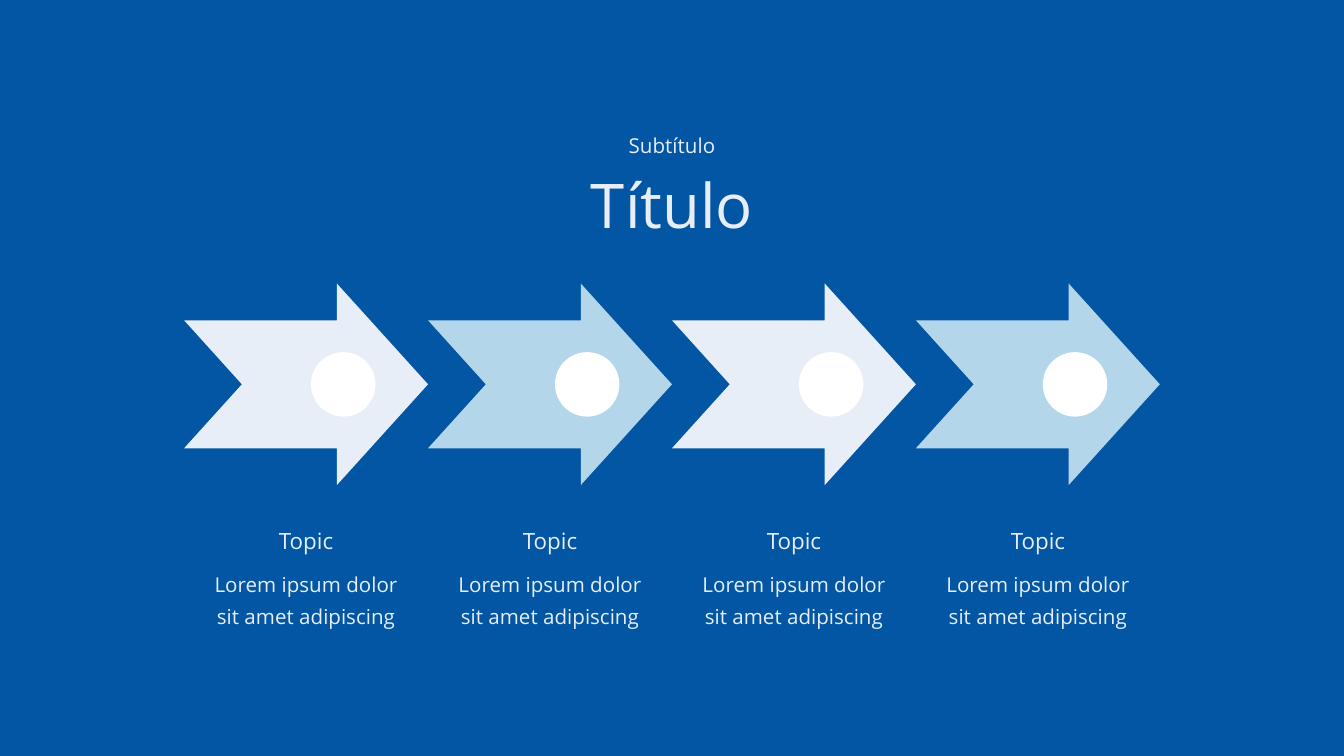
from pptx import Presentation
from pptx.dml.color import RGBColor
from pptx.enum.shapes import MSO_SHAPE
from pptx.enum.text import MSO_AUTO_SIZE, PP_ALIGN
from pptx.util import Inches, Pt

SLIDE_WIDTH = 10
SLIDE_HEIGHT = SLIDE_WIDTH * 9 / 16
COLUMN_COUNT = 4
COLUMN_WIDTH = 1.815
GRID_LEFT = (SLIDE_WIDTH - COLUMN_COUNT * COLUMN_WIDTH) / 2

ROYAL_BLUE = RGBColor(0x02, 0x56, 0xA3)
SKY_BLUE = RGBColor(0xB4, 0xD6, 0xEA)
PALE_BLUE = RGBColor(0xE8, 0xEE, 0xF8)
WHITE = RGBColor(0xFF, 0xFF, 0xFF)

ARROW_COLORS = [PALE_BLUE, SKY_BLUE]
TOPICS = [("Topic", "Lorem ipsum dolor sit amet adipiscing")] * COLUMN_COUNT

FRAME_FORMAT = {
    "word_wrap": True,
    "auto_size": MSO_AUTO_SIZE.SHAPE_TO_FIT_TEXT,
    "margin_left": Inches(0.07),
    "margin_right": Inches(0.07),
    "margin_top": Inches(0.04),
    "margin_bottom": Inches(0.04),
}


def set_attributes(target, values):
    for name, value in values.items():
        setattr(target, name, value)


def add_filled_shape(slide, kind, bounds, color, adjustments=()):
    shape = slide.shapes.add_shape(kind, *map(Inches, bounds))
    shape.shadow.inherit = False
    shape.fill.solid()
    shape.fill.fore_color.rgb = color
    shape.line.fill.background()
    for index, value in enumerate(adjustments):
        shape.adjustments[index] = value


def add_centered_text(slide, text, center, top, width, height, size, line_spacing=1.0):
    """Add a text box whose middle lies at the given horizontal position."""
    bounds = (center - width / 2, top, width, height)
    box = slide.shapes.add_textbox(*map(Inches, bounds))
    set_attributes(box.text_frame, FRAME_FORMAT)
    para = box.text_frame.paragraphs[0]
    set_attributes(para, {"alignment": PP_ALIGN.CENTER, "line_spacing": line_spacing})
    span = para.add_run()
    span.text = text
    set_attributes(span.font, {"name": "Open Sans", "size": Pt(size)})
    span.font.color.rgb = PALE_BLUE


def add_step(slide, column, topic, description):
    """Add one arrow with its circle and the two texts below it."""
    left = GRID_LEFT + column * COLUMN_WIDTH
    center = left + COLUMN_WIDTH / 2
    color = ARROW_COLORS[column % len(ARROW_COLORS)]
    add_filled_shape(slide, MSO_SHAPE.NOTCHED_RIGHT_ARROW,
                     (left, 2.11, COLUMN_WIDTH, 1.5), color, (0.635, 0.452))
    add_filled_shape(slide, MSO_SHAPE.OVAL,
                     (left + 0.52 * COLUMN_WIDTH, 2.62, 0.48, 0.48), WHITE)
    add_centered_text(slide, topic, center, 3.88, 1.55, 0.28, 12)
    add_centered_text(slide, description, center, 4.16, 1.55, 0.5, 11, 1.3)


def main():
    deck = Presentation()
    deck.slide_width, deck.slide_height = Inches(SLIDE_WIDTH), Inches(SLIDE_HEIGHT)
    slide = deck.slides.add_slide(deck.slide_layouts[6])
    add_filled_shape(slide, MSO_SHAPE.RECTANGLE,
                     (0, 0, SLIDE_WIDTH, SLIDE_HEIGHT), ROYAL_BLUE)
    middle = SLIDE_WIDTH / 2
    add_centered_text(slide, "Título", middle, 1.2, 6.48, 0.63, 33)
    add_centered_text(slide, "Subtítulo", middle, 0.95, 1.85, 0.26, 11)
    for column, (topic, description) in enumerate(TOPICS):
        add_step(slide, column, topic, description)
    deck.save("out.pptx")


if __name__ == "__main__":
    main()
